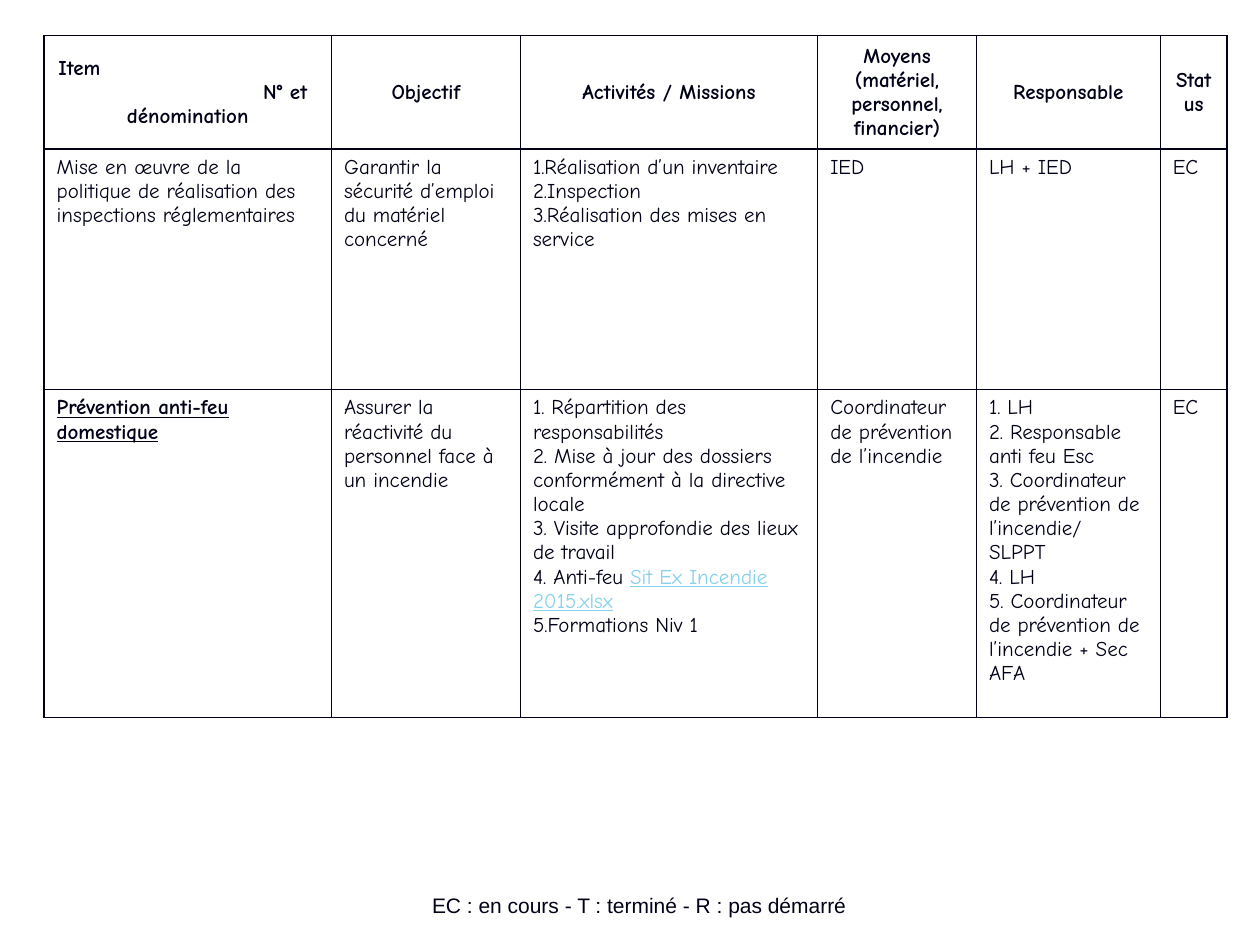
from lxml import etree
from pptx import Presentation
from pptx.dml.color import RGBColor
from pptx.enum.text import MSO_ANCHOR, PP_ALIGN
from pptx.oxml.ns import qn
from pptx.util import Pt

LEFT, CENTER = PP_ALIGN.LEFT, PP_ALIGN.CENTER
TOP, MIDDLE, BOTTOM = MSO_ANCHOR.TOP, MSO_ANCHOR.MIDDLE, MSO_ANCHOR.BOTTOM
COLORS = {"ink": "000018", "link": "86D1EC"}
TABLE_FONT, LEGEND_FONT = "Comic Neue", "Arial"

COLUMN_WIDTHS = [164.2, 108, 169.9, 90.7, 105.1, 38.2]
ROW_HEIGHTS = [64.8, 137.5, 187.2]
BORDER_WIDTH = 1

HEADINGS = [
    ["Item", "N° et", "dénomination"],
    ["Objectif"],
    ["Activités / Missions"],
    ["Moyens (matériel, personnel, financier)"],
    ["Responsable"],
    ["Status"],
]
INSPECTIONS = [
    ["Mise en œuvre de la politique de réalisation des inspections réglementaires"],
    ["Garantir la sécurité d’emploi du matériel concerné"],
    ["1.Réalisation d’un inventaire", "2.Inspection",
     "3.Réalisation des mises en service"],
    ["IED"],
    ["LH + IED"],
    ["EC"],
]
FIRE_ITEM = "Prévention anti-feu domestique"
FIRE_PREVENTION = [
    [FIRE_ITEM],
    ["Assurer la réactivité du personnel face à un incendie"],
    [" Répartition des responsabilités",
     " Mise à jour des dossiers conformément à la directive locale",
     " Visite approfondie des lieux de travail",
     " Anti-feu ",
     "Formations Niv 1"],
    ["Coordinateur de prévention de l’incendie"],
    [" LH",
     " Responsable anti feu Esc",
     "3. Coordinateur de prévention de l’incendie/\nSLPPT",
     "4. LH",
     "5. Coordinateur de prévention de l’incendie + Sec AFA"],
    ["EC"],
]
NUMBERED_COUNTS = {2: 5, 4: 2}  # column: paragraphs with automatic numbers
CHECKLIST_FILE = "Sit Ex Incendie 2015.xlsx"


def add_text(paragraph, text, font=TABLE_FONT, size=12, color="ink",
             bold=False, underline=False, align=LEFT):
    paragraph.alignment = align
    for index, line in enumerate(text.split("\n")):
        if index:
            paragraph.add_line_break()
        run = paragraph.add_run()
        run.text = line
        run.font.name = font
        run.font.size = Pt(size)
        run.font.bold = bold
        run.font.underline = underline
        run.font.color.rgb = RGBColor.from_string(COLORS[color])


def number_paragraph(paragraph):
    properties = paragraph._p.get_or_add_pPr()
    properties.set("marL", "0")
    properties.set("indent", "0")
    etree.SubElement(properties, qn("a:buAutoNum"), type="arabicPeriod")


def draw_borders(cell):
    properties = cell._tc.get_or_add_tcPr()
    for index, side in enumerate(("lnL", "lnR", "lnT", "lnB")):
        line = etree.Element(qn(f"a:{side}"), w=str(Pt(BORDER_WIDTH)))
        fill = etree.SubElement(line, qn("a:solidFill"))
        etree.SubElement(fill, qn("a:srgbClr"), val=COLORS["ink"])
        properties.insert(index, line)


def fill_cell(cell, lines, anchor=TOP, numbered=0, **text_format):
    cell.fill.background()
    draw_borders(cell)
    cell.vertical_anchor = anchor
    cell.margin_left = cell.margin_right = Pt(7.2)
    cell.margin_top = cell.margin_bottom = Pt(3.6)
    frame = cell.text_frame
    for index, line in enumerate(lines):
        paragraph = frame.paragraphs[0] if index == 0 else frame.add_paragraph()
        if index < numbered:
            number_paragraph(paragraph)
        add_text(paragraph, line, **text_format)
    return frame.paragraphs


def add_action_table(slide, left, top):
    table = slide.shapes.add_table(
        len(ROW_HEIGHTS), len(COLUMN_WIDTHS), Pt(left), Pt(top),
        Pt(sum(COLUMN_WIDTHS)), Pt(sum(ROW_HEIGHTS))).table
    table.first_row = table.horz_banding = False
    for column, width in zip(table.columns, COLUMN_WIDTHS):
        column.width = Pt(width)
    for row, height in zip(table.rows, ROW_HEIGHTS):
        row.height = Pt(height)

    # Headings; the first one is staggered over three lines
    for column, lines in enumerate(HEADINGS):
        heading = fill_cell(table.cell(0, column), lines, anchor=MIDDLE,
                            bold=True, align=CENTER)
        if column == 0:
            for paragraph, indent in zip(heading[:2], (1, 118)):
                paragraph.alignment = LEFT
                paragraph._p.get_or_add_pPr().set("marL", str(Pt(indent)))

    # Regulatory inspections
    for column, lines in enumerate(INSPECTIONS):
        fill_cell(table.cell(1, column), lines)

    # Fire prevention
    for column, lines in enumerate(FIRE_PREVENTION):
        is_item = column == 0
        paragraphs = fill_cell(table.cell(2, column), lines, bold=is_item,
                               underline=is_item,
                               numbered=NUMBERED_COUNTS.get(column, 0))
        if column == 2:
            add_text(paragraphs[3], CHECKLIST_FILE, color="link", underline=True)


def add_legend(slide, left, top, width, height):
    frame = slide.shapes.add_textbox(Pt(left), Pt(top), Pt(width), Pt(height)).text_frame
    frame.word_wrap = True
    frame.vertical_anchor = BOTTOM
    add_text(frame.paragraphs[0], "EC : en cours - T : terminé - R : pas démarré",
             font=LEGEND_FONT, align=CENTER)


def main():
    presentation = Presentation()
    presentation.slide_width, presentation.slide_height = Pt(720), Pt(540)
    slide = presentation.slides.add_slide(presentation.slide_layouts[6])
    add_action_table(slide, 25.2, 20.4)
    add_legend(slide, 167, 491.8, 396.7, 36)
    presentation.save("out.pptx")


if __name__ == "__main__":
    main()
